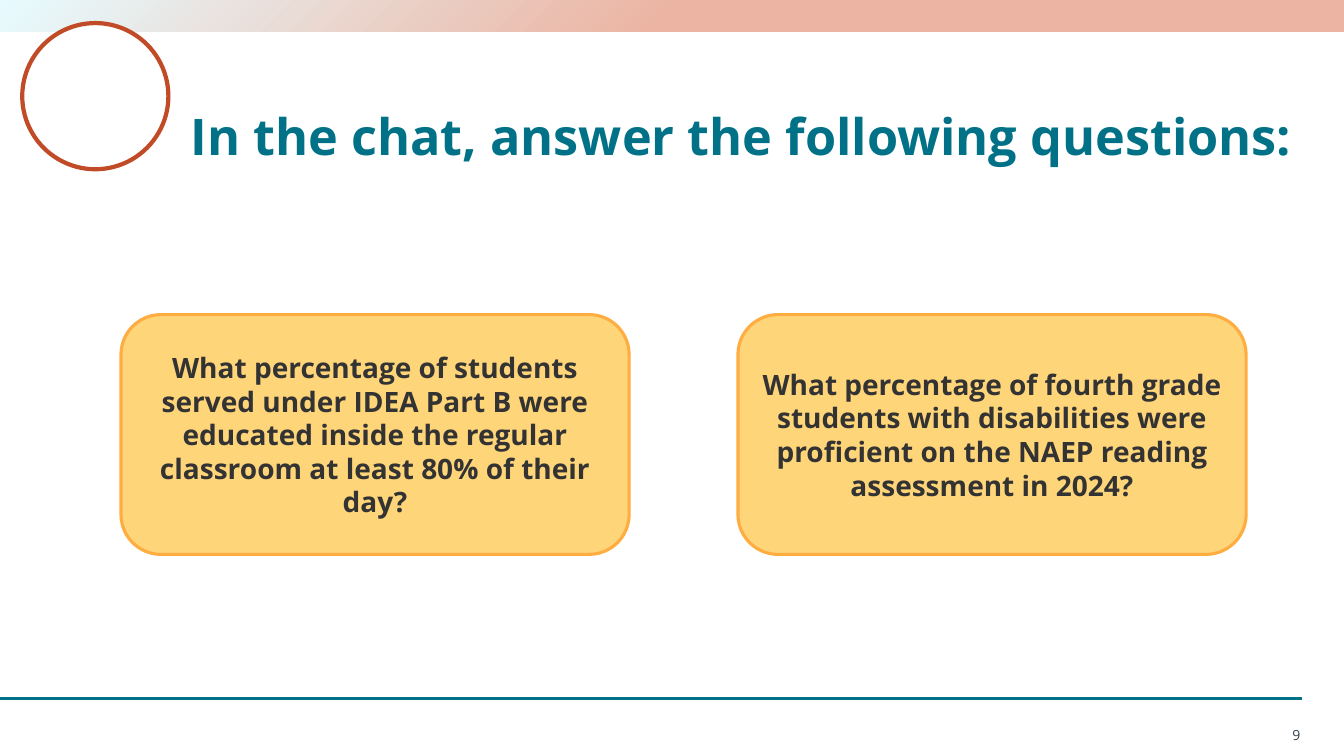
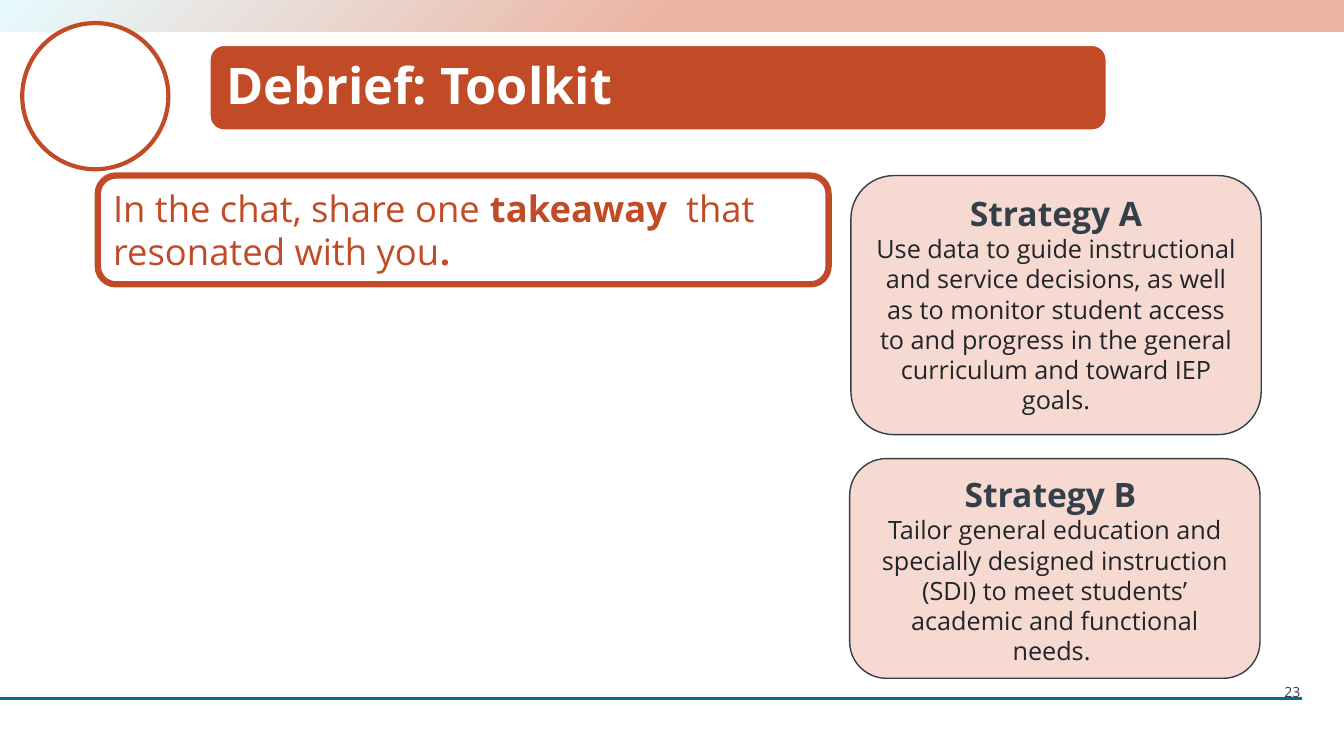
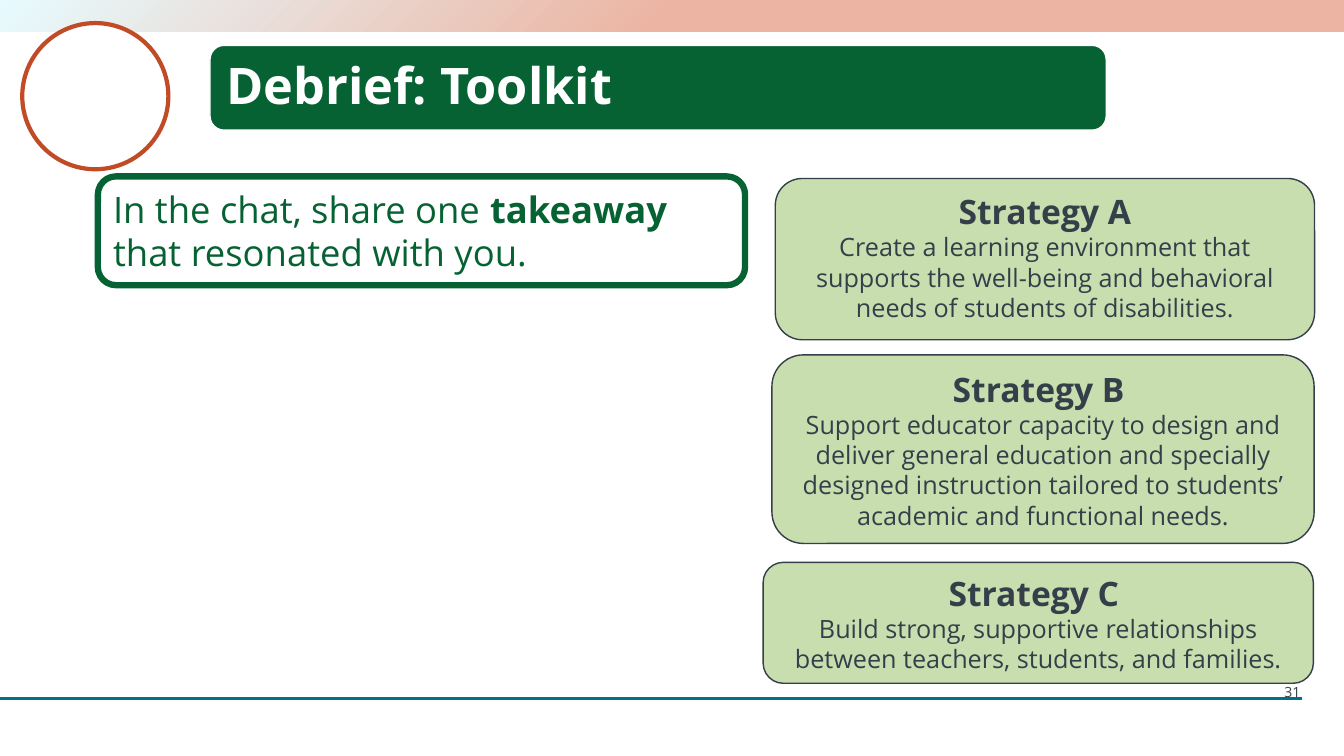
"""Build three workshop slides: chat questions and two toolkit debriefs."""
from dataclasses import dataclass

from pptx import Presentation
from pptx.dml.color import RGBColor
from pptx.enum.shapes import MSO_CONNECTOR, MSO_SHAPE
from pptx.enum.text import MSO_ANCHOR, PP_ALIGN
from pptx.oxml import parse_xml
from pptx.oxml.ns import nsdecls, qn
from pptx.oxml.xmlchemy import OxmlElement
from pptx.util import Inches, Pt


@dataclass(frozen=True)
class Theme:
    """Colours, type sizes and grid shared by all slides."""
    font: str = "Open Sans"
    teal: str = "007186"
    rust: str = "C04B26"
    green: str = "076233"
    salmon: str = "ECB4A2"
    ice: str = "E7FBFF"
    white: str = "FFFFFF"
    amber: str = "FFD579"
    amber_edge: str = "FFAD41"
    blush: str = "F6D9D0"
    sage: str = "C8DEAF"
    charcoal: str = "333333"
    slate: str = "343F49"
    ink: str = "212529"
    title: int = 36
    prompt: int = 26
    heading: int = 24
    question: int = 20
    body: int = 18
    number: int = 10
    columns: int = 32
    rows: int = 18


THEME = Theme()
WIDTH, HEIGHT = Inches(13.33), Inches(7.5)


def across(columns):
    """Turn grid columns into a slide length."""
    return round(WIDTH * columns / THEME.columns)


def down(rows):
    """Turn grid rows into a slide length."""
    return round(HEIGHT * rows / THEME.rows)


def place(left, top, width, height):
    """Turn a grid cell range into slide coordinates."""
    return across(left), down(top), across(width), down(height)


def add_box(page, kind, area, fill=None, edge=None, weight=1):
    """Add a preset shape with flat fill and outline."""
    box = page.shapes.add_shape(kind, *place(*area))
    box.shadow.inherit = False
    if fill:
        box.fill.solid()
        box.fill.fore_color.rgb = RGBColor.from_string(fill)
    else:
        box.fill.background()
    if edge:
        box.line.color.rgb = RGBColor.from_string(edge)
        box.line.width = Pt(weight)
    else:
        box.line.fill.background()
    return box


def set_frame(box, anchor, inset=None, wrap=True):
    """Set anchor, wrapping and optional equal insets of a box."""
    frame = box.text_frame
    frame.vertical_anchor = anchor
    frame.word_wrap = wrap
    if inset is not None:
        frame.margin_left = frame.margin_right = Inches(inset)
        frame.margin_top = frame.margin_bottom = Inches(inset)
    return frame


def write(para, spans, size, color, align=PP_ALIGN.LEFT, spacing=None):
    """Write (text, bold) spans into a paragraph run by run."""
    para.alignment = align
    if spacing:
        para.line_spacing = spacing
    for text, bold in spans:
        span = para.add_run()
        span.text = text
        span.font.name = THEME.font
        span.font.size = Pt(size)
        span.font.bold = bold
        span.font.color.rgb = RGBColor.from_string(color)


def add_top_band(page):
    """Add the gradient band along the top edge."""
    band = add_box(page, MSO_SHAPE.RECTANGLE, (0, 0, THEME.columns, 0.74), THEME.salmon)
    stops = "".join(
        f'<a:gs pos="{share * 1000}"><a:srgbClr val="{color}"/></a:gs>'
        for share, color in ((0, THEME.salmon), (50, THEME.salmon), (100, THEME.ice))
    )
    gradient = parse_xml(
        f'<a:gradFill {nsdecls("a")} rotWithShape="1"><a:gsLst>{stops}</a:gsLst>'
        '<a:path path="circle"><a:fillToRect l="100000" t="100000"/></a:path>'
        '<a:tileRect r="-100000" b="-100000"/></a:gradFill>'
    )
    properties = band.element.spPr
    properties.replace(properties.find(qn("a:solidFill")), gradient)


def add_footer_rule(page):
    """Add the thin rule above the footer."""
    rule = page.shapes.add_connector(
        MSO_CONNECTOR.STRAIGHT, 0, down(16.63), across(31), down(16.63))
    rule.line.color.rgb = RGBColor.from_string(THEME.teal)
    rule.line.width = Pt(1.5)
    rule.element.spPr.append(OxmlElement("a:effectLst"))


def add_page(deck):
    """Add a blank page with the shared furniture."""
    page = deck.slides.add_slide(deck.slide_layouts[6])
    add_footer_rule(page)
    add_top_band(page)
    add_box(page, MSO_SHAPE.OVAL, (0.53, 0.55, 3.48, 3.48), THEME.white, THEME.rust, 3)
    return page


def add_page_number(page, number, top):
    """Add the right-aligned page number."""
    box = page.shapes.add_textbox(*place(30.55, top, 0.41, 0.41))
    frame = set_frame(box, MSO_ANCHOR.BOTTOM, 0, wrap=False)
    write(frame.paragraphs[0], [(number, False)], THEME.number, THEME.slate, PP_ALIGN.RIGHT)


def add_title(page, text):
    """Add a plain teal title."""
    box = page.shapes.add_textbox(*place(4.54, 1.22, 26.42, 2.74))
    frame = set_frame(box, MSO_ANCHOR.BOTTOM, 0)
    write(frame.paragraphs[0], [(text, True)], THEME.title, THEME.teal, spacing=0.9)


def add_title_band(page, text, color):
    """Add a white title on a coloured rounded band."""
    box = add_box(page, MSO_SHAPE.ROUNDED_RECTANGLE, (5, 1.08, 21.34, 2.02), color, THEME.white)
    frame = set_frame(box, MSO_ANCHOR.MIDDLE, 0.12)
    write(frame.paragraphs[0], [(text, True)], THEME.title, THEME.white, spacing=0.9)


def add_question(page, column, text):
    """Add a question card in the given column."""
    area = (2.88 + column * 14.69, 7.49, 12.1, 5.71)
    box = add_box(page, MSO_SHAPE.ROUNDED_RECTANGLE, area, THEME.amber, THEME.amber_edge, 2.25)
    frame = set_frame(box, MSO_ANCHOR.MIDDLE, 0)
    write(frame.paragraphs[0], [(text, True)], THEME.question, THEME.charcoal, PP_ALIGN.CENTER)


def add_prompt(page, top, width, spans, color):
    """Add the outlined chat prompt."""
    area = (2.33, top, width, 2.59)
    box = add_box(page, MSO_SHAPE.ROUNDED_RECTANGLE, area, edge=color, weight=4.5)
    frame = set_frame(box, MSO_ANCHOR.TOP)
    write(frame.paragraphs[0], spans, THEME.prompt, color)


def add_strategy(page, area, fill, heading, body, color):
    """Add a strategy card with heading and body."""
    box = add_box(page, MSO_SHAPE.ROUNDED_RECTANGLE, area, fill, THEME.slate)
    frame = set_frame(box, MSO_ANCHOR.TOP)
    write(frame.paragraphs[0], [(heading, True)], THEME.heading, THEME.slate, PP_ALIGN.CENTER)
    write(frame.add_paragraph(), [(body, False)], THEME.body, color, PP_ALIGN.CENTER)


def add_questions_page(deck):
    """Add the page with the two chat questions."""
    page = add_page(deck)
    add_title(page, "In the chat, answer the following questions:")
    questions = (
        "What percentage of students served under IDEA Part B were educated "
        "inside the regular classroom at least 80% of their day?",
        "What percentage of fourth grade students with disabilities were "
        "proficient on the NAEP reading assessment in 2024?",
    )
    for column, text in enumerate(questions):
        add_question(page, column, text)
    add_page_number(page, "9", 17.28)


def add_debrief_page(deck, number, color, prompt, fill, body_color, strategies):
    """Add a debrief page with its prompt and strategy cards."""
    page = add_page(deck)
    add_title_band(page, "Debrief: Toolkit", color)
    add_prompt(page, *prompt, color)
    for area, heading, body in strategies:
        add_strategy(page, area, fill, heading, body, body_color)
    add_page_number(page, number, 16.27)


def main():
    """Build and save the deck."""
    deck = Presentation()
    deck.slide_width, deck.slide_height = WIDTH, HEIGHT
    add_questions_page(deck)
    opening = ("In the chat, share one ", False)
    add_debrief_page(
        deck, "23", THEME.rust,
        (4.18, 17.4, [opening, ("takeaway ", True),
                      (" that resonated with you", False), (".", True)]),
        THEME.blush, THEME.ink,
        (
            ((20.26, 4.18, 9.77, 6.17), "Strategy A",
             "Use data to guide instructional and service decisions, as well as to monitor "
             "student access to and progress in the general curriculum and toward IEP goals."),
            ((20.23, 10.92, 9.77, 5.23), "Strategy B ",
             "Tailor general education and specially designed instruction (SDI) to meet "
             "students’ academic and functional needs. "),
        ),
    )
    add_debrief_page(
        deck, "31", THEME.green,
        (4.2, 15.41, [opening, ("takeaway", True), (" that resonated with you.", False)]),
        THEME.sage, THEME.slate,
        (
            ((18.46, 4.25, 12.84, 3.84), "Strategy A",
             "Create a learning environment that supports the well-being and behavioral "
             "needs of students of disabilities."),
            ((18.38, 8.45, 12.91, 4.49), "Strategy B ",
             "Support educator capacity to design and deliver general education and specially "
             "designed instruction tailored to students’ academic and functional needs."),
            ((18.17, 13.39, 13.1, 2.88), "Strategy C ",
             "Build strong, supportive relationships between teachers, students, and families."),
        ),
    )
    deck.save("out.pptx")


if __name__ == "__main__":
    main()
